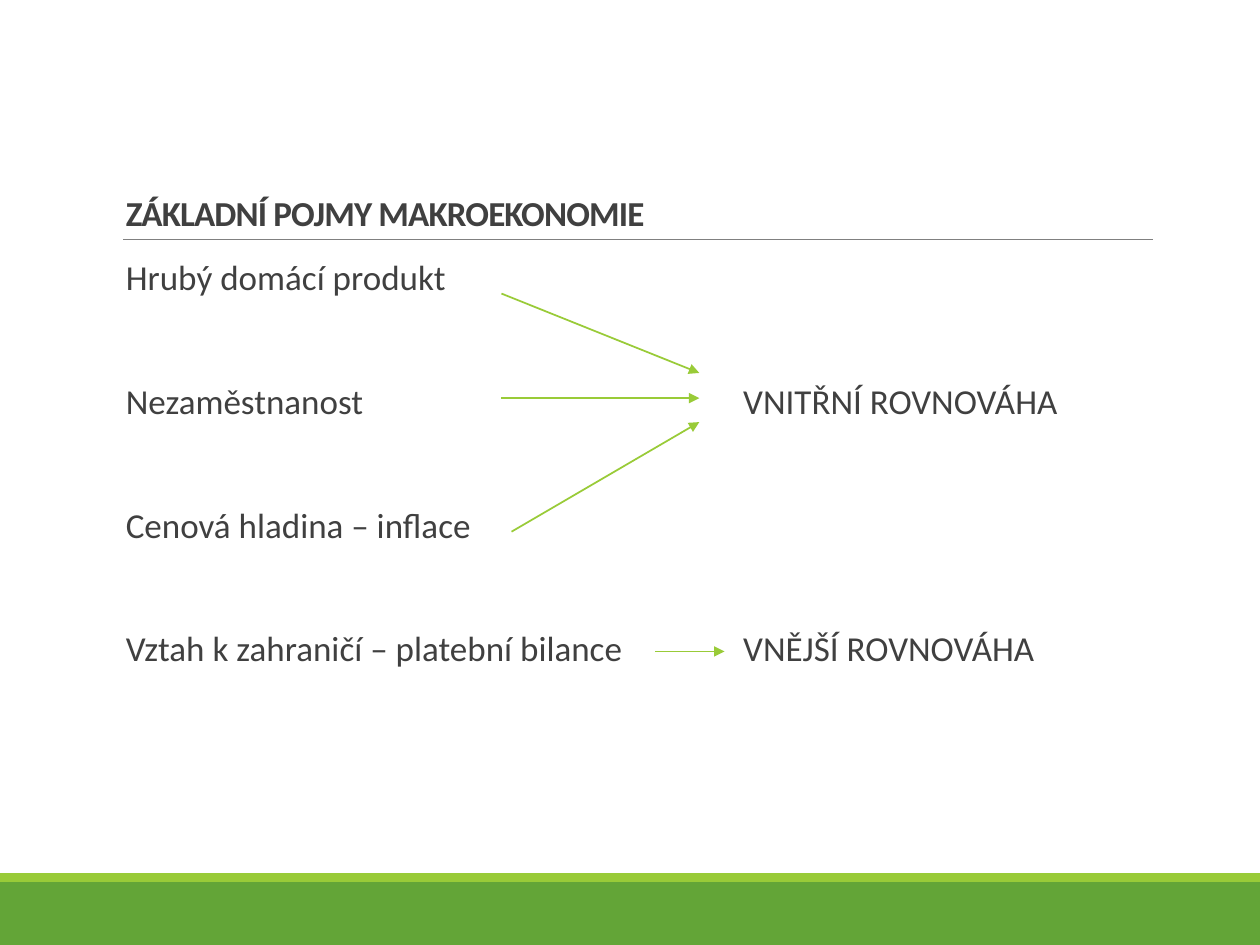
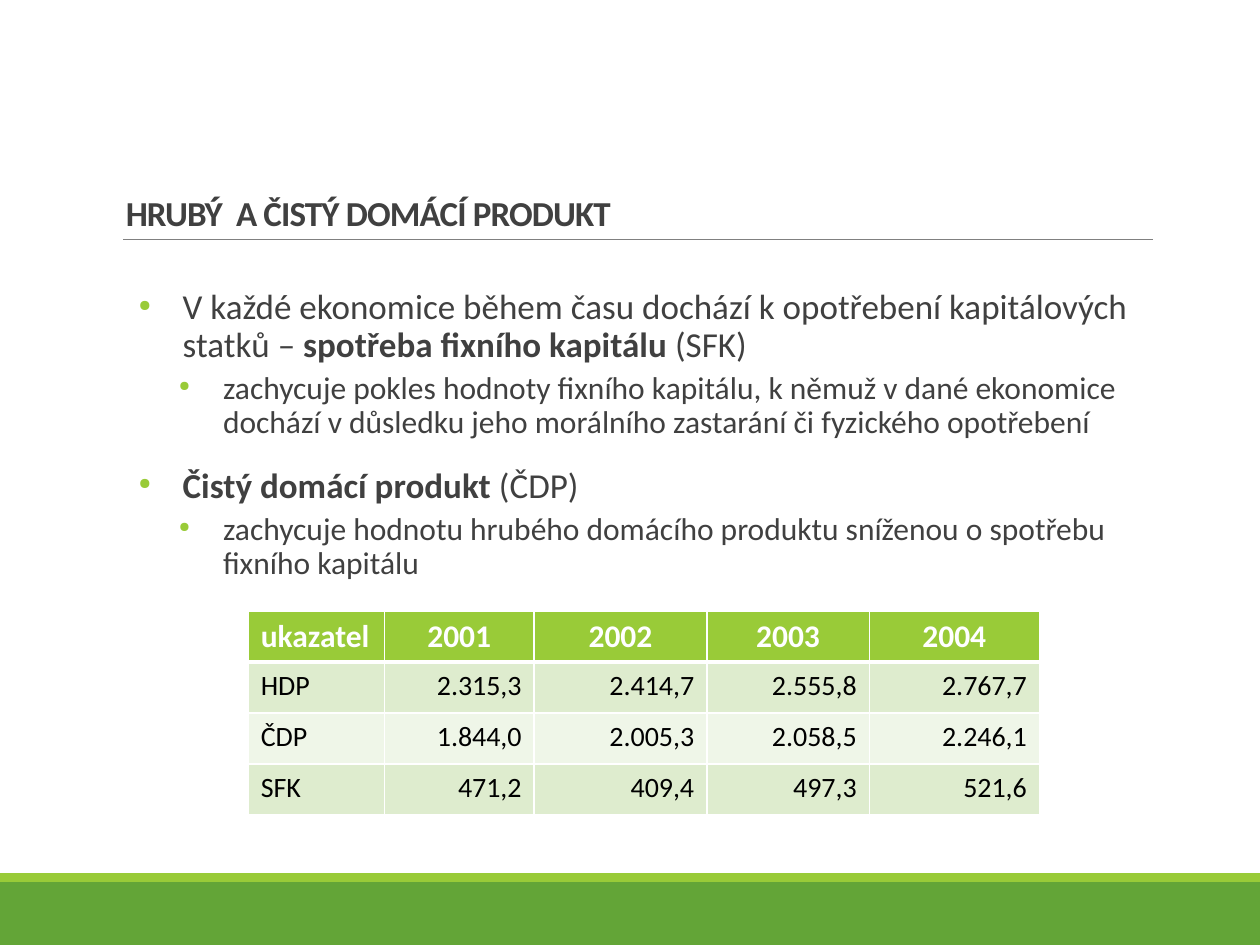
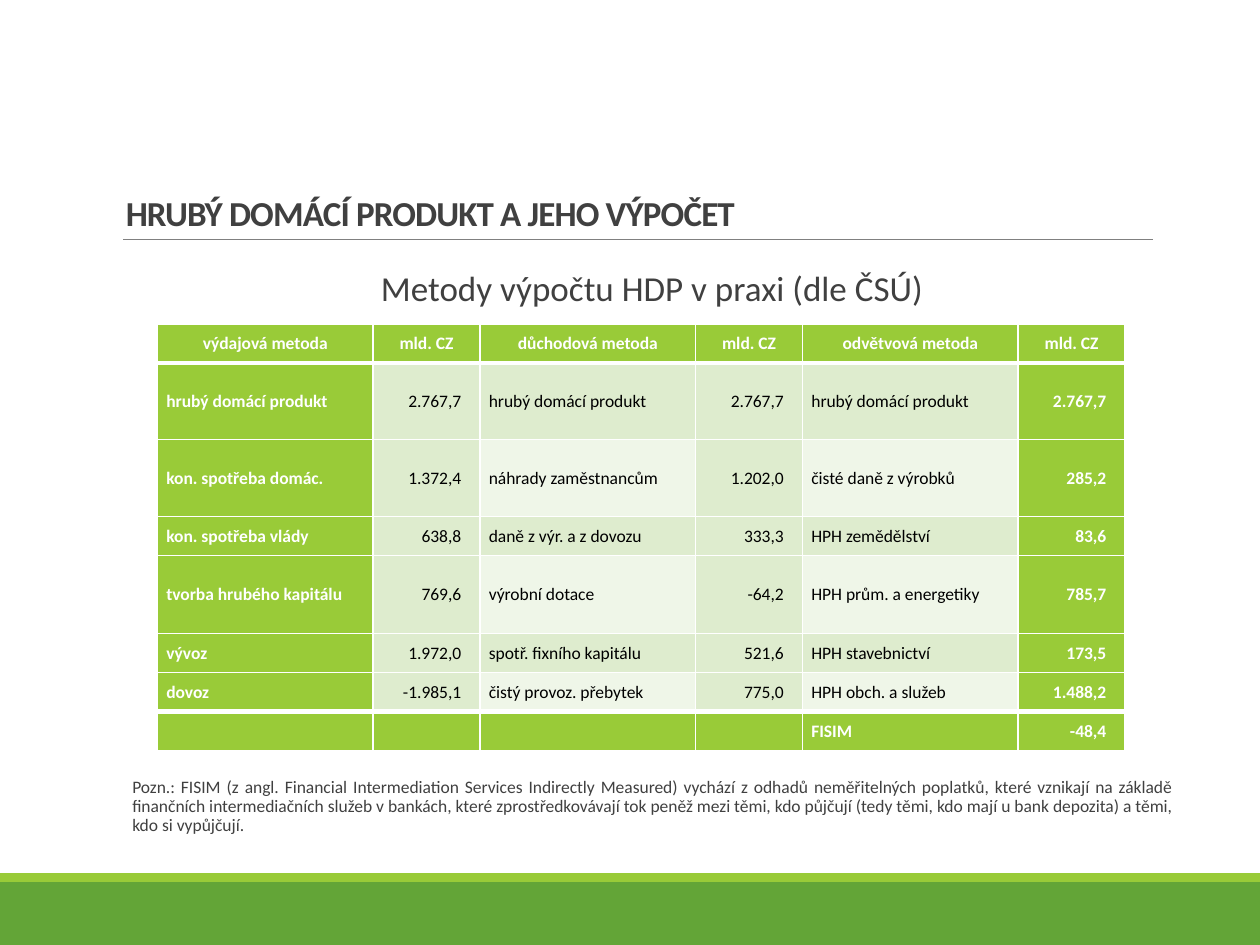
from collections.abc import Callable
from dataclasses import dataclass

from lxml import etree
from pptx import Presentation
from pptx.dml.color import RGBColor
from pptx.enum.shapes import MSO_CONNECTOR, MSO_SHAPE
from pptx.enum.text import MSO_ANCHOR, PP_ALIGN
from pptx.oxml.ns import qn
from pptx.presentation import Presentation as Deck
from pptx.shapes.connector import Connector
from pptx.slide import Slide
from pptx.table import _Cell
from pptx.text.text import _Paragraph
from pptx.util import Inches, Pt

FONT = "Calibri"
GREEN = RGBColor(0x63, 0xA5, 0x37)
LIME = RGBColor(0x99, 0xCB, 0x38)
PALE_LIME = RGBColor(0xDE, 0xEC, 0xCE)
PALEST_LIME = RGBColor(0xEF, 0xF6, 0xE8)
INK = RGBColor(0x40, 0x40, 0x40)
GRAY = RGBColor(0x80, 0x80, 0x80)
BLACK = RGBColor(0, 0, 0)
WHITE = RGBColor(0xFF, 0xFF, 0xFF)

LEFT, CENTER, RIGHT, JUSTIFY = PP_ALIGN.LEFT, PP_ALIGN.CENTER, PP_ALIGN.RIGHT, PP_ALIGN.JUSTIFY
TOP, MIDDLE, BOTTOM = MSO_ANCHOR.TOP, MSO_ANCHOR.MIDDLE, MSO_ANCHOR.BOTTOM
STRAIGHT = MSO_CONNECTOR.STRAIGHT
RECTANGLE = MSO_SHAPE.RECTANGLE

BODY_WIDTH = 8.25


@dataclass(frozen=True)
class Span:
    text: str
    bold: bool = False


@dataclass(frozen=True)
class Para:
    spans: tuple[Span, ...]
    size: float = 20
    align: PP_ALIGN = LEFT
    before: float = 12
    after: float = 2
    line_spacing: float = 0.9
    bold: bool = False
    bullet_indent: float = 0
    tab: float = 0
    tracking: float = 0


@dataclass(frozen=True)
class Box:
    left: float
    top: float
    height: float
    side_inset: float = 0.1
    anchor: MSO_ANCHOR = TOP


@dataclass(frozen=True)
class Line:
    start: tuple[float, float]
    end: tuple[float, float]


@dataclass(frozen=True)
class Grid:
    left: float
    top: float
    widths: list[float]
    heights: list[float]
    rows: list[list[str]]
    fill: Callable[[int, int], RGBColor]
    header_size: float
    body_size: float
    has_total: bool = False
    compact: bool = False
    first_centered: int = 0


TITLE_BOX = Box(0.9, 0.31, 1.59, anchor=BOTTOM)
TITLE_RULE = Line((0.98, 1.9), (9.15, 1.9))

CONCEPT_ROWS = [
    "Hrubý domácí produkt",
    "Nezaměstnanost\tVNITŘNÍ ROVNOVÁHA",
    "Cenová hladina – inflace",
    "Vztah k zahraničí – platební bilance\tVNĚJŠÍ ROVNOVÁHA",
]
CONCEPT_ARROWS = [
    Line((3.98, 2.33), (5.55, 2.96)),
    Line((3.98, 3.16), (5.55, 3.16)),
    Line((4.06, 4.22), (5.55, 3.35)),
    Line((5.2, 5.17), (5.75, 5.17)),
]


def topic(*spans: Span) -> Para:
    return Para(spans, bullet_indent=0.47)


def detail(text: str) -> Para:
    return Para((Span(text),), size=18, before=2, after=4, bullet_indent=0.79)


PRODUCT_PARAS = [
    topic(
        Span("V každé ekonomice během času dochází k opotřebení kapitálových statků – "),
        Span("spotřeba fixního kapitálu ", bold=True),
        Span("(SFK)"),
    ),
    detail("zachycuje pokles hodnoty fixního kapitálu, k němuž v dané ekonomice "
           "dochází v důsledku jeho morálního zastarání či fyzického opotřebení"),
    topic(Span("Čistý domácí produkt ", bold=True), Span("(ČDP)")),
    detail("zachycuje hodnotu hrubého domácího produktu sníženou o spotřebu fixního kapitálu"),
]


def band_color(row: int) -> RGBColor:
    return PALE_LIME if row % 2 else PALEST_LIME


def product_fill(row: int, column: int) -> RGBColor:
    return band_color(row) if row else LIME


def method_fill(row: int, column: int) -> RGBColor:
    """Green frame around the body; only the inner label columns are banded."""
    if row in (0, 7) or column in (0, 5):
        return LIME
    return PALE_LIME if column % 2 else band_color(row)


PRODUCT_GRID = Grid(
    1.97, 4.85, [1.08, 1.19, 1.37, 1.29, 1.35], [0.405] * 4,
    [
        ["ukazatel", "2001", "2002", "2003", "2004"],
        ["HDP", "2.315,3", "2.414,7", "2.555,8", "2.767,7"],
        ["ČDP", "1.844,0", "2.005,3", "2.058,5", "2.246,1"],
        ["SFK", "471,2", "409,4", "497,3", "521,6"],
    ],
    product_fill, header_size=18, body_size=16, first_centered=1,
)
METHOD_GRID = Grid(
    1.25, 2.57, [1.71, 0.85] * 3, [0.31, 0.61, 0.61, 0.31, 0.62, 0.31, 0.31, 0.31],
    [
        ["výdajová metoda", "mld. CZ", "důchodová metoda", "mld. CZ", "odvětvová metoda", "mld. CZ"],
        ["hrubý domácí produkt", "2.767,7"] * 3,
        ["kon. spotřeba domác.", "1.372,4", "náhrady zaměstnancům", "1.202,0",
         "čisté daně z výrobků", "285,2"],
        ["kon. spotřeba vlády", "638,8", "daně z výr. a z dovozu", "333,3",
         "HPH zemědělství", "83,6"],
        ["tvorba hrubého kapitálu", "769,6", "výrobní dotace", "-64,2",
         "HPH prům. a energetiky", "785,7"],
        ["vývoz", "1.972,0", "spotř. fixního kapitálu", "521,6", "HPH stavebnictví", "173,5"],
        ["dovoz", "-1.985,1", "čistý provoz. přebytek", "775,0", "HPH obch. a služeb", "1.488,2"],
        ["", "", "", "", "FISIM", "-48,4"],
    ],
    method_fill, header_size=10, body_size=10, has_total=True, compact=True,
)
METHOD_NOTE = (
    "Pozn.: FISIM (z angl. Financial Intermediation Services Indirectly Measured) vychází z odhadů "
    "neměřitelných poplatků, které vznikají na základě finančních intermediačních služeb v bankách, "
    "které zprostředkovávají tok peněž mezi těmi, kdo půjčují (tedy těmi, kdo mají u bank depozita) "
    "a těmi, kdo si vypůjčují."
)


def add_bullet(paragraph: _Paragraph, indent: float) -> None:
    properties = paragraph._p.get_or_add_pPr()
    properties.set("marL", str(Inches(indent)))
    properties.set("indent", str(Inches(-0.35)))
    color = etree.SubElement(properties, qn("a:buClr"))
    etree.SubElement(color, qn("a:srgbClr"), val=str(LIME))
    etree.SubElement(properties, qn("a:buSzPct"), val="45000")
    etree.SubElement(properties, qn("a:buChar"), char="●")


def add_tab(paragraph: _Paragraph, position: float) -> None:
    stops = etree.SubElement(paragraph._p.get_or_add_pPr(), qn("a:tabLst"))
    etree.SubElement(stops, qn("a:tab"), pos=str(Inches(position)), algn="l")


def set_font(paragraph: _Paragraph, size: float, color: RGBColor, bold: bool) -> None:
    font = paragraph.font
    font.name = FONT
    font.size = Pt(size)
    font.color.rgb = color
    font.bold = bold


def write_para(paragraph: _Paragraph, para: Para) -> None:
    if para.bullet_indent:
        add_bullet(paragraph, para.bullet_indent)
    if para.tab:
        add_tab(paragraph, para.tab)
    paragraph.alignment = para.align
    paragraph.line_spacing = para.line_spacing
    paragraph.space_before = Pt(para.before)
    paragraph.space_after = Pt(para.after)
    set_font(paragraph, para.size, INK, para.bold)
    for span in para.spans:
        run = paragraph.add_run()
        run.text = span.text
        if span.bold:
            run.font.bold = True
        if para.tracking:
            run._r.get_or_add_rPr().set("spc", str(round(para.tracking * 100)))


def add_text(page: Slide, box: Box, paras: list[Para]) -> None:
    shape = page.shapes.add_textbox(
        Inches(box.left), Inches(box.top), Inches(BODY_WIDTH), Inches(box.height))
    frame = shape.text_frame
    frame.word_wrap = True
    frame.vertical_anchor = box.anchor
    frame.margin_left = frame.margin_right = Inches(box.side_inset)
    for index, para in enumerate(paras):
        write_para(frame.add_paragraph() if index else frame.paragraphs[0], para)


def add_line(page: Slide, line: Line, color: RGBColor, width: float) -> Connector:
    connector = page.shapes.add_connector(
        STRAIGHT, *(Inches(value) for value in line.start + line.end))
    connector.line.color.rgb = color
    connector.line.width = Pt(width)
    etree.SubElement(connector._element.spPr, qn("a:effectLst"))
    return connector


def add_arrow(page: Slide, line: Line) -> None:
    connector = add_line(page, line, LIME, 1)
    etree.SubElement(connector.line._get_or_add_ln(), qn("a:tailEnd"), type="triangle")


def add_band(page: Slide, top: float, height: float, color: RGBColor) -> None:
    band = page.shapes.add_shape(RECTANGLE, 0, Inches(top), Inches(10), Inches(height))
    band.shadow.inherit = False
    band.fill.solid()
    band.fill.fore_color.rgb = color
    band.line.fill.background()


def add_page(deck: Deck, title: str) -> Slide:
    page = deck.slides.add_slide(deck.slide_layouts[6])
    add_band(page, 7, 0.5, GREEN)
    add_band(page, 6.93, 0.07, LIME)
    add_line(page, TITLE_RULE, GRAY, 0.5)
    add_text(page, TITLE_BOX, [Para(
        (Span(title),), before=0, after=0, line_spacing=0.85, bold=True, tracking=-0.5)])
    return page


def set_borders(cell: _Cell, top: float, bottom: float) -> None:
    properties = cell._tc.get_or_add_tcPr()
    widths = {"a:lnL": 1, "a:lnR": 1, "a:lnT": top, "a:lnB": bottom}
    for index, (tag, width) in enumerate(widths.items()):
        border = etree.Element(qn(tag), w=str(Pt(width)))
        fill = etree.SubElement(border, qn("a:solidFill"))
        etree.SubElement(fill, qn("a:srgbClr"), val=str(WHITE))
        properties.insert(index, border)


def fill_cell(cell: _Cell, grid: Grid, row: int, column: int) -> None:
    text = grid.rows[row][column]
    color = grid.fill(row, column)
    is_number = row > 0 and text[-1:].isdigit()
    cell.fill.solid()
    cell.fill.fore_color.rgb = color
    paragraph = cell.text_frame.paragraphs[0]
    if text:
        paragraph.add_run().text = text
    if is_number:
        paragraph.alignment = RIGHT
    elif row == 0 and column >= grid.first_centered:
        paragraph.alignment = CENTER
    strong = color == LIME
    set_font(paragraph, grid.body_size if row else grid.header_size,
             WHITE if strong else BLACK, strong)
    if grid.compact:
        cell.vertical_anchor = MIDDLE
        cell.margin_left = Inches(0.07)
        cell.margin_right = Inches(0.15 if is_number else 0.07)
        cell.margin_top = cell.margin_bottom = 0
        paragraph.space_before = paragraph.space_after = Pt(2)
    heavy_edges = {1, len(grid.rows) - 1} if grid.has_total else {1}
    set_borders(cell, 3 if row in heavy_edges else 1, 3 if row + 1 in heavy_edges else 1)


def add_grid(page: Slide, grid: Grid) -> None:
    table = page.shapes.add_table(
        len(grid.heights), len(grid.widths), Inches(grid.left), Inches(grid.top),
        Inches(sum(grid.widths)), Inches(sum(grid.heights))).table
    for column, width in zip(table.columns, grid.widths):
        column.width = Inches(width)
    for row, height in zip(table.rows, grid.heights):
        row.height = Inches(height)
    for row in range(len(grid.heights)):
        for column in range(len(grid.widths)):
            fill_cell(table.cell(row, column), grid, row, column)


def add_concepts(deck: Deck) -> None:
    page = add_page(deck, "ZÁKLADNÍ POJMY MAKROEKONOMIE")
    add_text(page, Box(0.9, 2.02, 4.4),
             [Para((Span(text),), before=47, tab=4.9) for text in CONCEPT_ROWS])
    for arrow in CONCEPT_ARROWS:
        add_arrow(page, arrow)


def add_products(deck: Deck) -> None:
    page = add_page(deck, "HRUBÝ  A ČISTÝ DOMÁCÍ PRODUKT")
    add_text(page, Box(0.98, 2.25, 4.4, side_inset=0), PRODUCT_PARAS)
    add_grid(page, PRODUCT_GRID)


def add_methods(deck: Deck) -> None:
    page = add_page(deck, "HRUBÝ DOMÁCÍ PRODUKT A JEHO VÝPOČET")
    heading = Para((Span("Metody výpočtu HDP v praxi (dle ČSÚ)"),), align=CENTER)
    note = Para((Span(METHOD_NOTE),), size=10, align=JUSTIFY)
    for top, height, para in ((2.1, 0.45, heading), (6.13, 0.69, note)):
        box = Box(1.05, top, height, side_inset=0)
        add_text(page, box, [para])
    add_grid(page, METHOD_GRID)


def main() -> None:
    deck = Presentation()
    deck.slide_width = Inches(10)
    deck.slide_height = Inches(7.5)
    add_concepts(deck)
    add_products(deck)
    add_methods(deck)
    deck.save("out.pptx")


if __name__ == "__main__":
    main()
